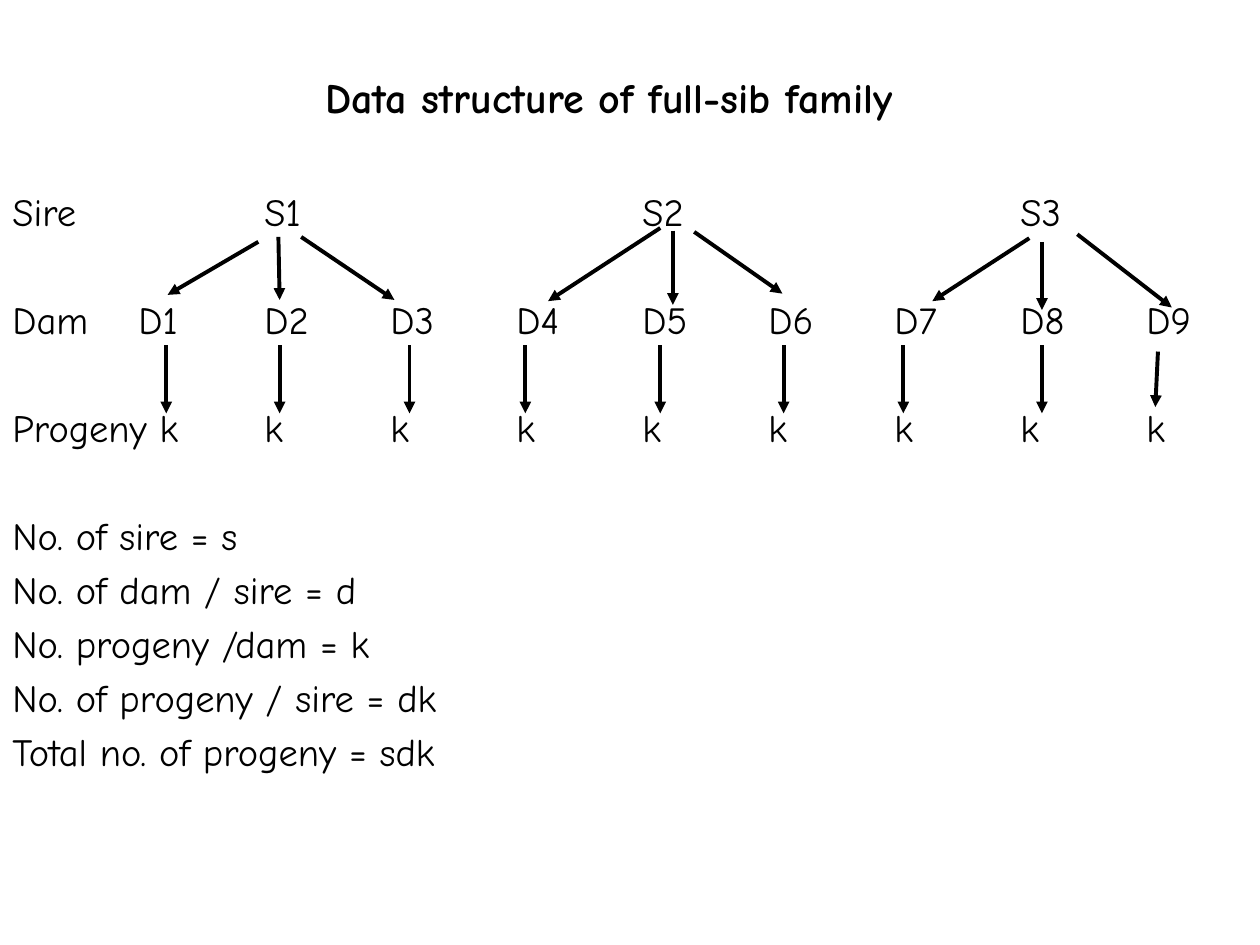
from lxml import etree
from pptx import Presentation
from pptx import util as u
from pptx.dml.color import RGBColor
from pptx.enum import shapes, text
from pptx.oxml import ns

FONT = "Comic Neue"
BLACK = "000000"
TITLE = "Data structure of full-sib family"
PEDIGREE = [
    "Sire\t\tS1\t\t\tS2\t\t\tS3",
    "Dam\tD1\tD2\tD3\tD4\tD5\tD6\tD7\tD8\tD9",
    "Progeny k\tk\tk\tk\tk\tk\tk\tk\tk",
]
COUNTS = [
    "No. of sire = s",
    "No. of dam / sire = d",
    "No. progeny /dam = k",
    "No. of progeny / sire = dk",
    "Total no. of progeny = sdk",
]
SIRE_TO_DAM = [
    (147.6, 138.2, 95.8, 168.5),
    (159.1, 135.4, 159.8, 171.4),
    (172.1, 135.4, 225.4, 171.4),
    (377.3, 130.3, 313.2, 172.1),
    (384.5, 131.8, 384.5, 174.2),
    (396.7, 132.5, 447.1, 167.8),
    (588.2, 136.1, 532.8, 172.1),
    (595.4, 138.2, 595.4, 177.1),
    (615.6, 133.9, 669.6, 175.7),
]
DAM_X = [95, 159.8, 234, 300.2, 377.3, 447.8, 516.2, 595.4]
DAM_TOP, DAM_BOTTOM = 197.3, 236.2
LAST_DAM = (661.7, 200.9, 660.2, 232.6)
TAB_STEP = 72
TAB_COUNT = 9

TITLE_FORMAT = {"size": u.Pt(24), "bold": True, "name": FONT}
BODY_FORMAT = {"size": u.Pt(22), "bold": False, "name": FONT}
TITLE_LINE, BODY_LINE = 30, 26
AFTER_TITLE, WIDE_GAP, NARROW_GAP = 38.1, 35.71, 4.86


def color(value):
    return RGBColor.from_string(value)


def add_tabs(para):
    tabs = etree.SubElement(para._p.get_or_add_pPr(), ns.qn("a:tabLst"))
    for number in range(1, TAB_COUNT + 1):
        etree.SubElement(tabs, ns.qn("a:tab"),
                         pos=str(u.Pt(number * TAB_STEP)), algn="l")


def fill_para(para, words, line, before, formats, align):
    if "\t" in words:
        add_tabs(para)
    para.alignment = align
    para.line_spacing = u.Pt(line)
    para.space_before = u.Pt(before)
    span = para.add_run()
    span.text = words
    for name, value in formats.items():
        setattr(span.font, name, value)
    span.font.color.rgb = color(BLACK)


def add_arrow(page, ends):
    arrow = page.shapes.add_connector(
        shapes.MSO_CONNECTOR.STRAIGHT, *(u.Pt(end) for end in ends))
    arrow.line.width = u.Pt(2.25)
    arrow.line.color.rgb = color(BLACK)
    etree.SubElement(arrow.line._get_or_add_ln(), ns.qn("a:tailEnd"),
                     type="triangle")
    etree.SubElement(arrow._element.spPr, ns.qn("a:effectLst"))


def main():
    deck = Presentation()
    deck.slide_width, deck.slide_height = u.Pt(720), u.Pt(540)
    page = deck.slides.add_slide(deck.slide_layouts[6])

    box = page.shapes.add_textbox(u.Pt(0), u.Pt(36), u.Pt(696), u.Pt(434))
    frame = box.text_frame
    frame.word_wrap = True
    frame.vertical_anchor = text.MSO_ANCHOR.TOP
    fill_para(frame.paragraphs[0], TITLE, TITLE_LINE, 0, TITLE_FORMAT,
              text.PP_ALIGN.CENTER)
    gaps = ([AFTER_TITLE] + [WIDE_GAP] * len(PEDIGREE)
            + [NARROW_GAP] * (len(COUNTS) - 1))
    for words, gap in zip(PEDIGREE + COUNTS, gaps):
        fill_para(frame.add_paragraph(), words, BODY_LINE, gap, BODY_FORMAT,
                  text.PP_ALIGN.LEFT)

    dam_to_progeny = [(x, DAM_TOP, x, DAM_BOTTOM) for x in DAM_X] + [LAST_DAM]
    for ends in SIRE_TO_DAM + dam_to_progeny:
        add_arrow(page, ends)

    deck.save("out.pptx")


if __name__ == "__main__":
    main()
